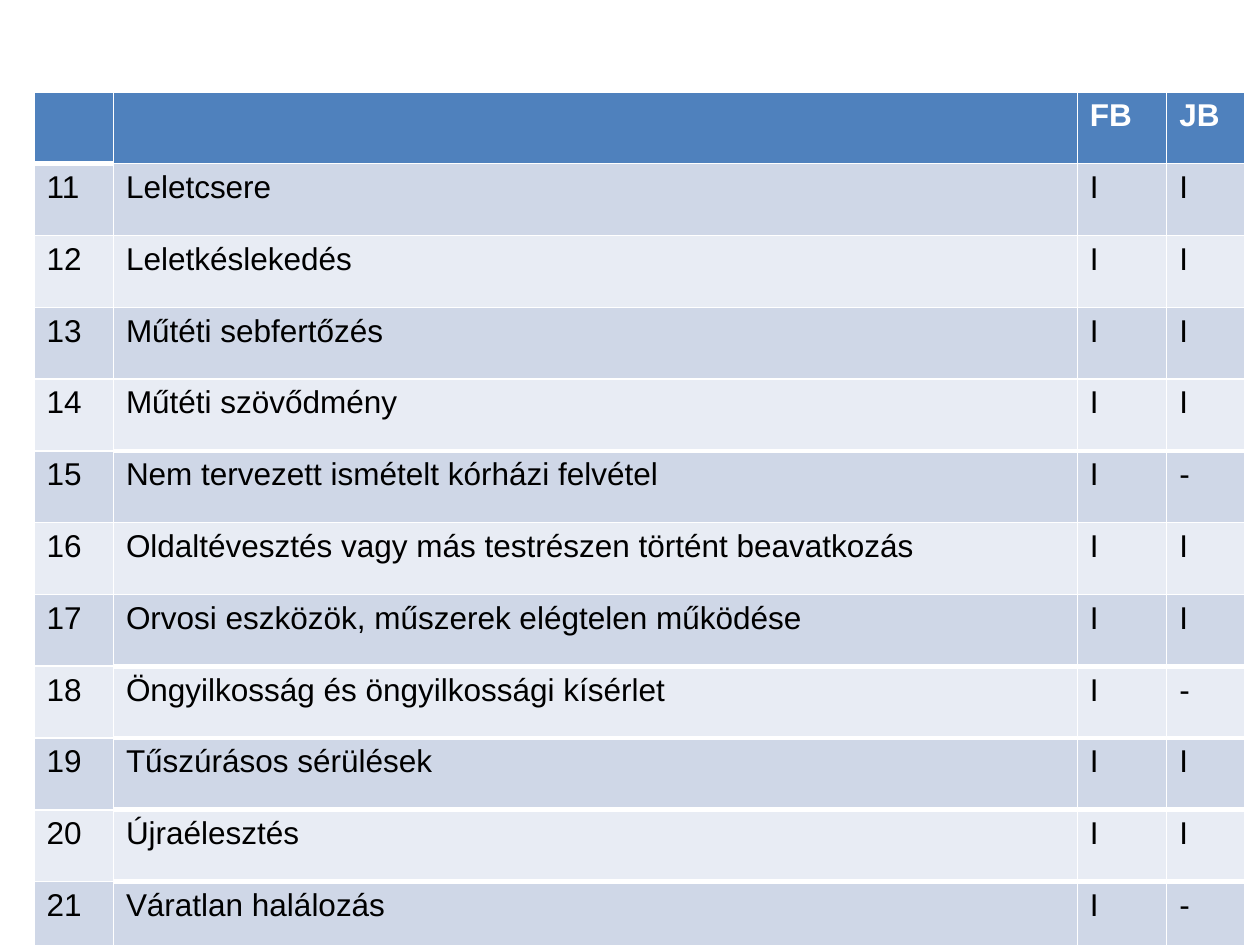
from dataclasses import dataclass
from typing import NamedTuple

from lxml.etree import SubElement as Sub
from pptx import Presentation
from pptx.dml.color import RGBColor as RGB
from pptx.oxml.ns import qn
from pptx.util import Emu, Pt

SCALE = 9144  # EMU per px, at 100 px to the inch


@dataclass(frozen=True)
class Theme:
    font: str = "Arial"
    size: int = 18
    head: str = "4F81BD"
    bands: tuple[str, str] = ("E8ECF4", "CFD7E7")
    light: str = "FFFFFF"
    dark: str = "000000"
    thin: int = 1
    thick: int = 3


class Event(NamedTuple):
    num: str
    name: str
    fb: str
    jb: str
    heavy: bool = False  # thick rule below the row


THEME = Theme()
LEFT, TOP, ROW = 27, 73, 57
COLS = (63, 765, 71, 62)
HEAD = Event("", "", "FB", "JB")
EVENTS = (
    Event("11", "Leletcsere", "I", "I"),
    Event("12", "Leletkéslekedés", "I", "I"),
    Event("13", "Műtéti sebfertőzés", "I", "I"),
    Event("14", "Műtéti szövődmény", "I", "I", True),
    Event("15", "Nem tervezett ismételt kórházi felvétel", "I", "-"),
    Event("16", "Oldaltévesztés vagy más testrészen történt beavatkozás", "I", "I"),
    Event("17", "Orvosi eszközök, műszerek elégtelen működése", "I", "I", True),
    Event("18", "Öngyilkosság és öngyilkossági kísérlet", "I", "-", True),
    Event("19", "Tűszúrásos sérülések", "I", "I", True),
    Event("20", "Újraélesztés", "I", "I", True),
    Event("21", "Váratlan halálozás", "I", "-", True),
)
ROWS = (HEAD, *EVENTS)


def px(n: int) -> Emu:
    return Emu(n * SCALE)


def rule(row: int, col: int) -> int:
    """Width of the line below a cell; row -1 is the top edge."""
    if row < 0:
        return THEME.thin
    heavy = col == 0 if row == 0 else col > 0 and ROWS[row].heavy
    return THEME.thick if heavy else THEME.thin


def edge(cell, row: int, col: int) -> None:
    """Draw the four borders of a cell."""
    props = cell._tc.get_or_add_tcPr()
    sides = {"L": THEME.thin, "R": THEME.thin,
             "T": rule(row - 1, col), "B": rule(row, col)}
    for side, width in sides.items():
        line = Sub(props, qn(f"a:ln{side}"), w=str(Pt(width)))
        fill = Sub(line, qn("a:solidFill"))
        Sub(fill, qn("a:srgbClr"), val=THEME.light)


def paint(cell, text: str, row: int) -> None:
    """Fill a cell and set its text."""
    head = row == 0
    cell.fill.solid()
    shade = THEME.head if head else THEME.bands[row % 2]
    cell.fill.fore_color.rgb = RGB.from_string(shade)
    cell.text_frame.text = text
    font = cell.text_frame.paragraphs[0].font
    for run in cell.text_frame.paragraphs[0].runs:
        font = run.font
        font.name, font.size, font.bold = THEME.font, Pt(THEME.size), head
        font.color.rgb = RGB.from_string(THEME.light if head else THEME.dark)


def grid(slide) -> None:
    """Add the table of reportable events."""
    frame = slide.shapes.add_table(
        len(ROWS), len(COLS), px(LEFT), px(TOP),
        px(sum(COLS)), px(ROW * len(ROWS)))
    table = frame.table
    for col, width in zip(table.columns, COLS):
        col.width = px(width)
    for r, event in enumerate(ROWS):
        table.rows[r].height = px(ROW)
        for c, text in enumerate(event[:len(COLS)]):
            cell = table.cell(r, c)
            edge(cell, r, c)
            paint(cell, text, r)


def main() -> None:
    deck = Presentation()
    deck.slide_width, deck.slide_height = px(1000), px(750)
    grid(deck.slides.add_slide(deck.slide_layouts[6]))
    deck.save("out.pptx")


if __name__ == "__main__":
    main()
